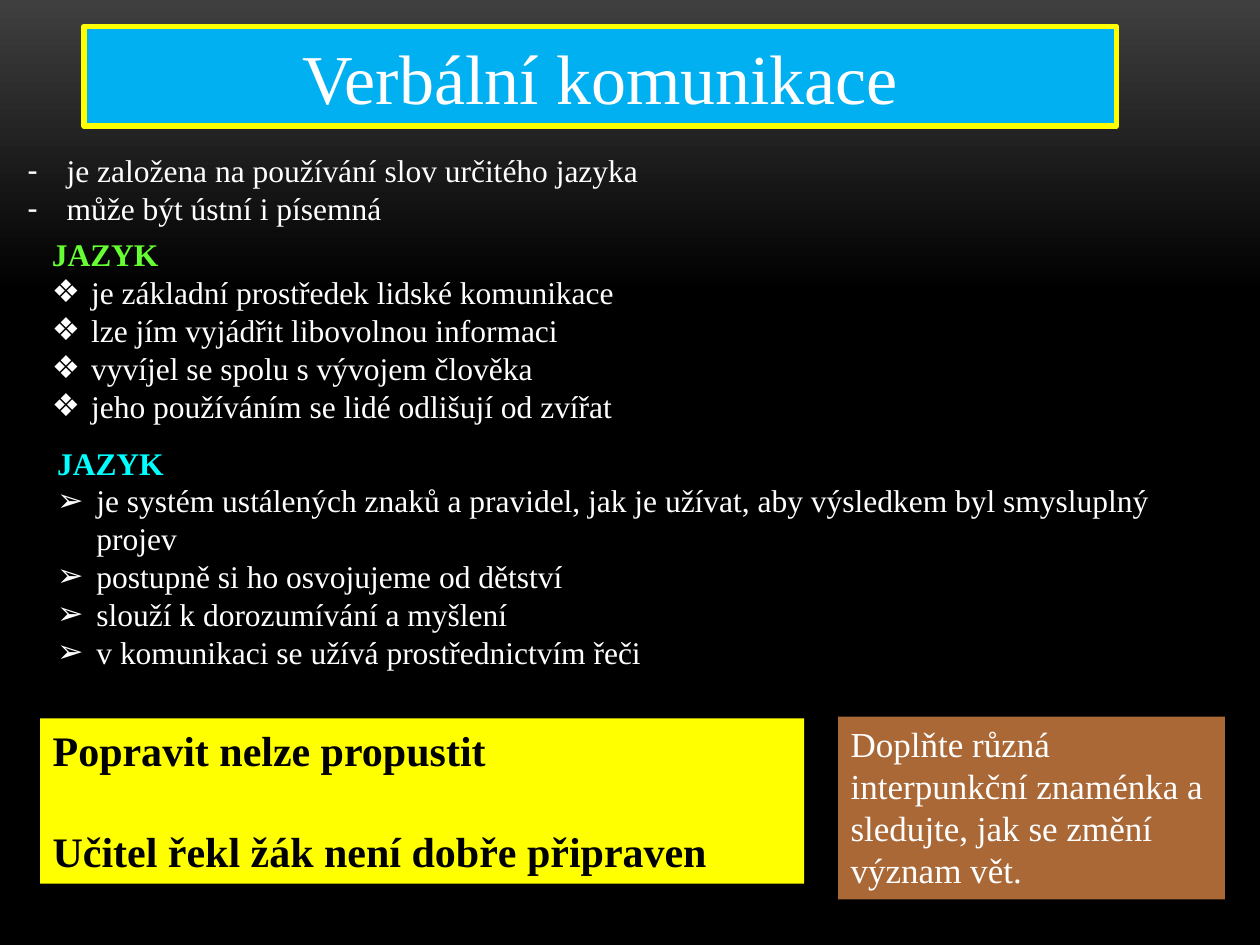
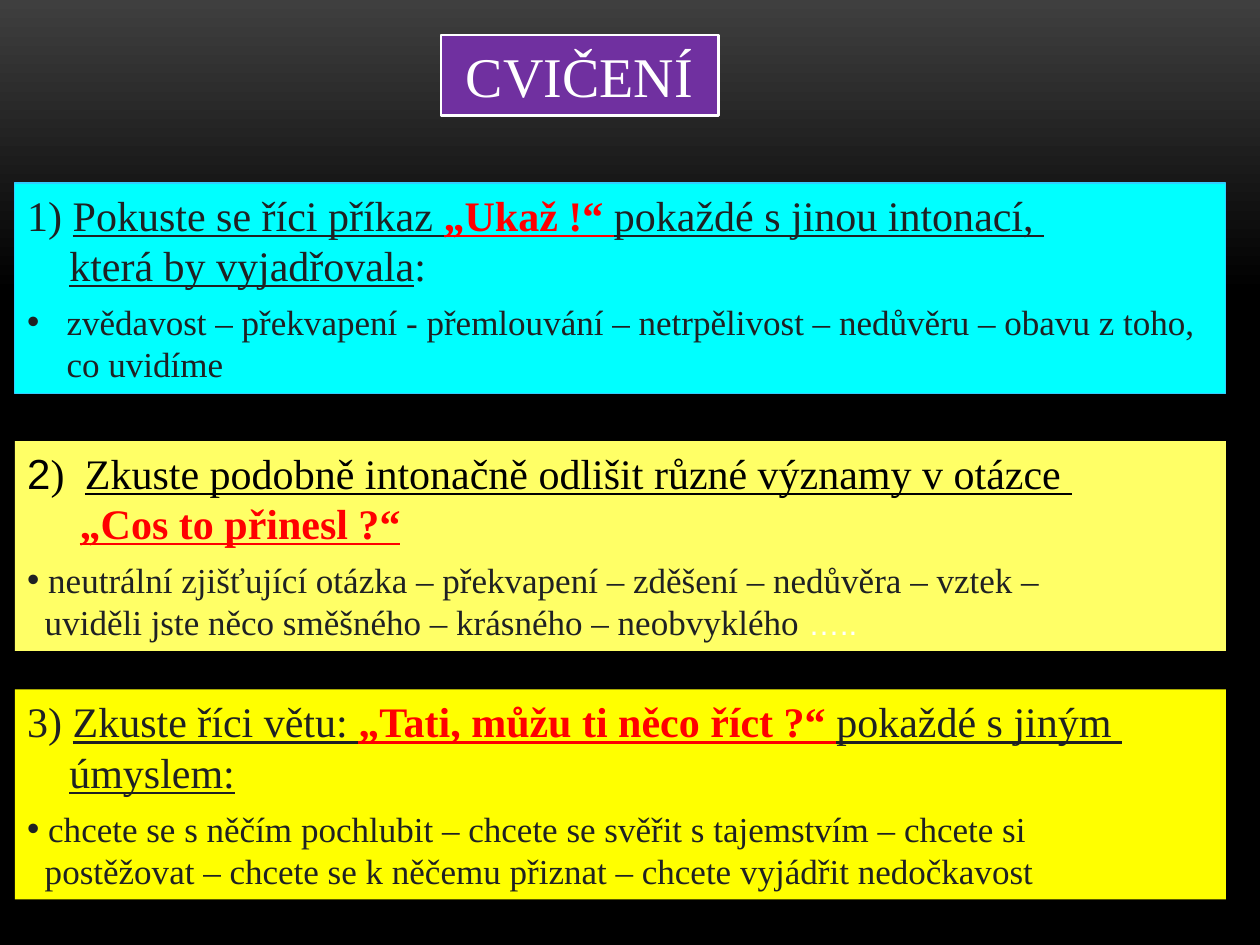
"""Build two slides on verbal communication: an overview and an intonation exercise."""
from lxml.etree import SubElement
from pptx import Presentation
from pptx.dml.color import RGBColor
from pptx.enum.shapes import MSO_SHAPE
from pptx.enum.text import MSO_ANCHOR, PP_ALIGN
from pptx.oxml.ns import qn
from pptx.util import Pt

rgb = RGBColor.from_string
SERIF, SANS = "Times New Roman", "Arial"
WHITE, BLACK, INK, RED = "FFFFFF", "000000", "1F2123", "FF0000"
YELLOW, CYAN, GREEN = "FFFF00", "00FFFF", "66FF33"
HANG = 22.5


def add_box(s, left, top, width, height, fill=None, line=None, line_width=1):
    box = Pt(left), Pt(top), Pt(width), Pt(height)
    if fill:
        sp = s.shapes.add_shape(MSO_SHAPE.RECTANGLE, *box)
        sp.shadow.inherit = False
        sp.fill.solid()
        sp.fill.fore_color.rgb = rgb(fill)
        if line:
            sp.line.color.rgb = rgb(line)
            sp.line.width = Pt(line_width)
        else:
            sp.line.fill.background()
    else:
        sp = s.shapes.add_textbox(*box)
    tf = sp.text_frame
    tf.word_wrap = True
    tf.vertical_anchor = MSO_ANCHOR.TOP
    return tf


def add_par(tf, size, runs, left=0, hang=0, bullet=None, before=0, align=PP_ALIGN.LEFT):
    p = tf.paragraphs[0] if not tf.paragraphs[0].runs else tf.add_paragraph()
    pPr = p._p.get_or_add_pPr()
    pPr.set("marL", str(Pt(left)))
    pPr.set("indent", str(-Pt(hang)))
    if bullet:
        SubElement(pPr, qn("a:buFont")).set("typeface", SANS)
        SubElement(pPr, qn("a:buChar")).set("char", bullet)
    p.alignment = align
    p.line_spacing = Pt(size * 1.2)
    if before:
        p.space_before = Pt(before)
    for text, color, style, *other in runs:
        r = p.add_run()
        r.text = text
        r.font.name, r.font.size = other or (SERIF, Pt(size))
        r.font.color.rgb = rgb(color)
        r.font.bold = "b" in style
        r.font.underline = "u" in style


prs = Presentation()
prs.slide_width, prs.slide_height = Pt(720), Pt(540)

titles = [
    ("Verbální komunikace", 40, (48, 15, 590, 57, "00B0F0", YELLOW, 3)),
    ("CVIČENÍ", 32, (252, 20, 158.5, 46, "7030A0", WHITE, 1.5)),
]
slides = []
for title, size, box in titles:
    s = prs.slides.add_slide(prs.slide_layouts[6])
    fill = s.background.fill
    fill.gradient()
    fill.gradient_angle = 270
    for stop, (position, color) in zip(fill.gradient_stops, [(0, "3F3F3F"), (0.31, BLACK)]):
        stop.position = position
        stop.color.rgb = rgb(color)
    tf = add_box(s, *box)
    tf.vertical_anchor = MSO_ANCHOR.MIDDLE
    add_par(tf, size, [(title, WHITE, "")], align=PP_ALIGN.CENTER)
    slides.append(s)
overview, exercise = slides

lists = [
    ((8.5, 83, 657.5, 51), None, None, "-", [
        "je založena na používání slov určitého jazyka",
        "může být ústní i písemná",
    ]),
    ((22.5, 131, 686, 116.5), "JAZYK", GREEN, "❖", [
        "je základní prostředek lidské komunikace",
        "lze jím vyjádřit libovolnou informaci",
        "vyvíjel se spolu s vývojem člověka",
        "jeho používáním se lidé odlišují od zvířat",
    ]),
    ((25.5, 250, 686, 181.5), "JAZYK", CYAN, "➢", [
        "je systém ustálených znaků a pravidel, jak je užívat, aby výsledkem byl smysluplný projev",
        "postupně si ho osvojujeme od dětství",
        "slouží k dorozumívání a myšlení",
        "v komunikaci se užívá prostřednictvím řeči",
    ]),
]
for box, heading, color, bullet, items in lists:
    tf = add_box(overview, *box)
    if heading:
        add_par(tf, 18, [(heading, color, "b")])
    for item in items:
        add_par(tf, 18, [(item, WHITE, "")], HANG, HANG, bullet)

tf = add_box(overview, 479, 409.5, 221, 104.5, "AA6837")
task = "Doplňte různá interpunkční znaménka a sledujte, jak se změní význam vět."
add_par(tf, 20, [(task, WHITE, "")])

tf = add_box(overview, 23, 410.5, 436.5, 94.5, YELLOW)
add_par(tf, 24, [("Popravit nelze propustit", BLACK, "b")])
add_par(tf, 24, [("Učitel řekl žák není dobře připraven", BLACK, "b")], before=28.8)

exercises = [
    (104.5, 120.5, CYAN, "33CCFF", 26, 24,
     [("1)\t", INK, ""), ("Pokuste se říci příkaz ", INK, "u"), ("„Ukaž !“ ", RED, "bu"),
      ("pokaždé s jinou intonací, ", INK, "u")],
     [("která by vyjadřovala", INK, "u"), (":", INK, "")],
     HANG,
     [[("zvědavost – překvapení - přemlouvání – netrpělivost – nedůvěru – obavu z toho, co uvidíme",
        INK, "")]]),
    (252, 120, "FFFF66", None, 33, 30,
     [("2", BLACK, "", SANS, Pt(24)), (")\t", BLACK, ""),
      ("Zkuste podobně intonačně odlišit různé významy v otázce ", BLACK, "u")],
     [("„Cos to přinesl ?“", RED, "bu")],
     12,
     [[("neutrální zjišťující otázka – překvapení – zděšení – nedůvěra – vztek –", INK, "")],
      [("uviděli jste něco směšného – krásného – neobvyklého ", INK, ""),
       ("…..", WHITE, "", SANS, Pt(18))]]),
    (394, 120, YELLOW, None, 26, 24,
     [("3)\t", INK, ""), ("Zkuste říci větu: ", INK, "u"),
      ("„Tati, můžu ti něco říct ?“ ", RED, "bu"), ("pokaždé s jiným ", INK, "u")],
     [("úmyslem:", INK, "u")],
     12,
     [[("chcete se s něčím pochlubit – chcete se svěřit s tajemstvím – chcete si", INK, "")],
      [("postěžovat – chcete se k něčemu přiznat – chcete vyjádřit nedočkavost", INK, "")]]),
]
for top, height, fill, line, number, indent, first, second, hang, answers in exercises:
    tf = add_box(exercise, 8.5, top, 692, height, fill, line, 0.75)
    add_par(tf, 24, first, number, number)
    add_par(tf, 24, second, indent)
    add_par(tf, 20, answers[0], hang, hang, "•", before=6)
    for answer in answers[1:]:
        add_par(tf, 20, answer, 10)

prs.save("out.pptx")
